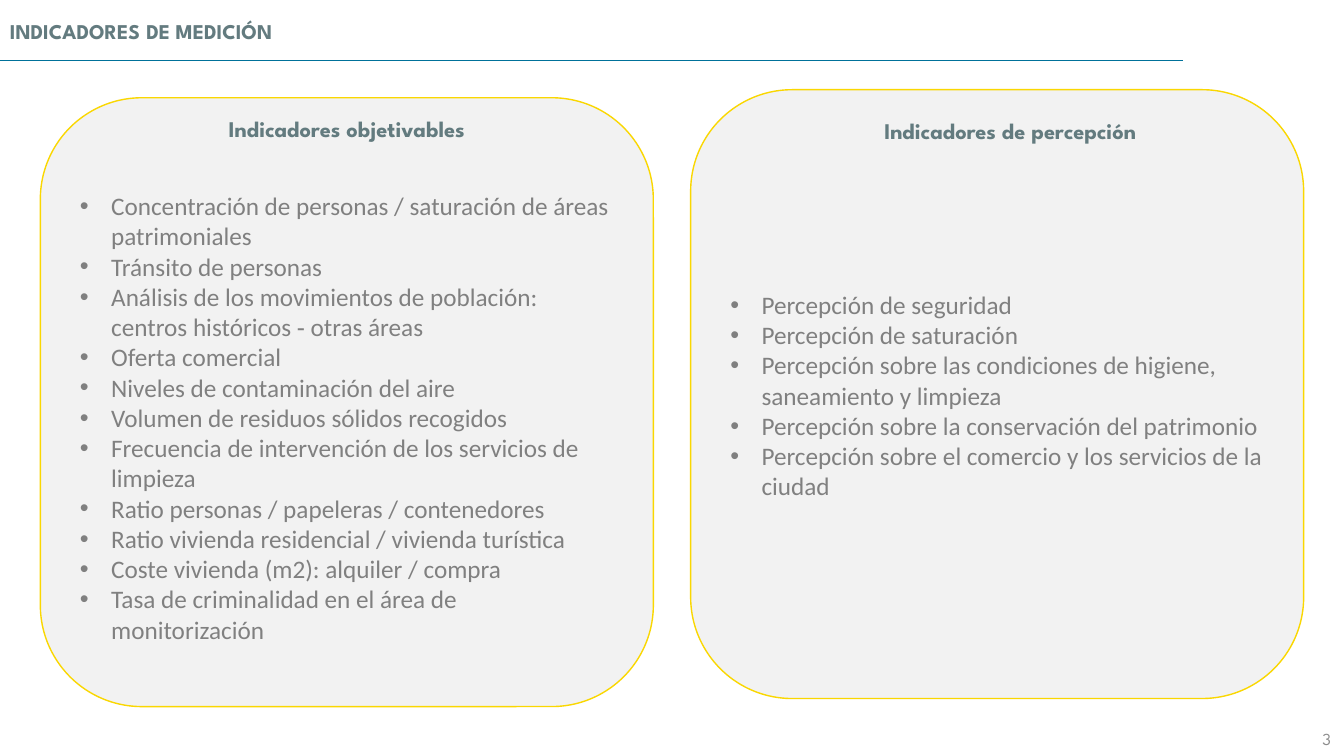
from lxml import etree
from pptx import Presentation
from pptx.dml.color import RGBColor
from pptx.enum import shapes, text
from pptx.oxml.ns import qn
from pptx.util import Inches, Pt

TEAL = RGBColor(0x00, 0x71, 0x9A)
SLATE = RGBColor(0x63, 0x7B, 0x7F)
YELLOW = RGBColor(0xFA, 0xD7, 0x01)
PALE = RGBColor(0xF2, 0xF2, 0xF2)
GRAY = RGBColor(0x80, 0x80, 0x80)
PAGE_GRAY = RGBColor(0x8C, 0x8C, 0x8C)

TITLE = dict(name="League Spartan", size=Pt(15), bold=True, color=SLATE)
TITLE_GAP = dict(name="League Spartan", size=Pt(18), bold=False, color=SLATE)
HEADING = dict(name="League Spartan", size=Pt(16), bold=True, color=SLATE)
BODY = dict(name="Calibri", size=Pt(18), bold=False, color=GRAY)
PAGE = dict(name="League Spartan", size=Pt(12), bold=False, color=PAGE_GRAY)

OBJECTIVE = [
    "Concentración de personas / saturación de áreas patrimoniales",
    "Tránsito de personas",
    "Análisis de los movimientos de población: centros históricos ‐ otras áreas",
    "Oferta comercial",
    "Niveles de contaminación del aire",
    "Volumen de residuos sólidos recogidos",
    "Frecuencia de intervención de los servicios de limpieza",
    "Ratio personas / papeleras / contenedores",
    "Ratio vivienda residencial / vivienda turística",
    "Coste vivienda (m2): alquiler / compra",
    "Tasa de criminalidad en el área de monitorización",
]
PERCEPTION = [
    "Percepción de seguridad",
    "Percepción de saturación",
    "Percepción sobre las condiciones de higiene, saneamiento y limpieza",
    "Percepción sobre la conservación del patrimonio",
    "Percepción sobre el comercio y los servicios de la ciudad",
]


def add_run(p, content, fmt):
    r = p.add_run()
    r.text = content
    for key, value in fmt.items():
        if key == "color":
            r.font.color.rgb = value
        else:
            setattr(r.font, key, value)


def add_text(s, box, runs, align=text.PP_ALIGN.LEFT, anchor=text.MSO_ANCHOR.TOP, spacing=1.0):
    tf = s.shapes.add_textbox(*map(Inches, box)).text_frame
    tf.word_wrap = True
    tf.vertical_anchor = anchor
    p = tf.paragraphs[0]
    p.alignment = align
    p.line_spacing = spacing
    for content, fmt in runs:
        add_run(p, content, fmt)


def add_bullet(p):
    pPr = p._p.get_or_add_pPr()
    pPr.set("marL", str(Inches(0.31)))
    pPr.set("indent", str(-Inches(0.31)))
    etree.SubElement(pPr, qn("a:buFont")).set("typeface", "Arial")
    etree.SubElement(pPr, qn("a:buChar")).set("char", "•")


def add_header(s, left, top, width):
    rule_y = Inches(top + 0.6)
    rule = s.shapes.add_connector(
        shapes.MSO_CONNECTOR.STRAIGHT, Inches(left), rule_y, Inches(left + width), rule_y)
    rule.line.color.rgb = TEAL
    rule.line.width = Pt(1)
    etree.SubElement(rule._element.spPr, qn("a:effectLst"))
    add_text(s, (left, top + 0.09, width, 0.4),
             [("INDICADORES", TITLE), (" ", TITLE_GAP), ("DE MEDICIÓN", TITLE)])


def add_panel(s, box, heading, heading_offset, items, margin_top):
    left, top, width, height = box
    sp = s.shapes.add_shape(shapes.MSO_SHAPE.ROUNDED_RECTANGLE, *map(Inches, box))
    sp.shadow.inherit = False
    sp.fill.solid()
    sp.fill.fore_color.rgb = PALE
    sp.line.color.rgb = YELLOW
    sp.line.width = Pt(1)
    tf = sp.text_frame
    tf.word_wrap = True
    tf.vertical_anchor = text.MSO_ANCHOR.MIDDLE
    tf.margin_top = Inches(margin_top)
    for i, item in enumerate(items):
        p = tf.add_paragraph() if i else tf.paragraphs[0]
        p.alignment = text.PP_ALIGN.LEFT
        add_bullet(p)
        add_run(p, item, BODY)
    dx, dy = heading_offset
    add_text(s, (left + dx, top + dy, width, 0.37), [(heading, HEADING)],
             align=text.PP_ALIGN.CENTER, spacing=1.07)


def add_page_number(s, box, number):
    add_text(s, box, [(number, PAGE)], align=text.PP_ALIGN.RIGHT,
             anchor=text.MSO_ANCHOR.BOTTOM)


def main():
    prs = Presentation()
    prs.slide_width, prs.slide_height = Inches(13.33), Inches(7.5)
    s = prs.slides.add_slide(prs.slide_layouts[6])
    add_header(s, 0, 0, 11.73)
    add_panel(s, (6.85, 0.89, 6.08, 6.04), "Indicadores de percepción",
              (0.13, 0.2), PERCEPTION, 0.07)
    add_panel(s, (0.4, 0.97, 6.08, 6.04), "Indicadores objetivables",
              (0, 0.1), OBJECTIVE, 0.35)
    add_page_number(s, (10.3, 7.08, 3, 0.4), "3")
    prs.save("out.pptx")


if __name__ == "__main__":
    main()
